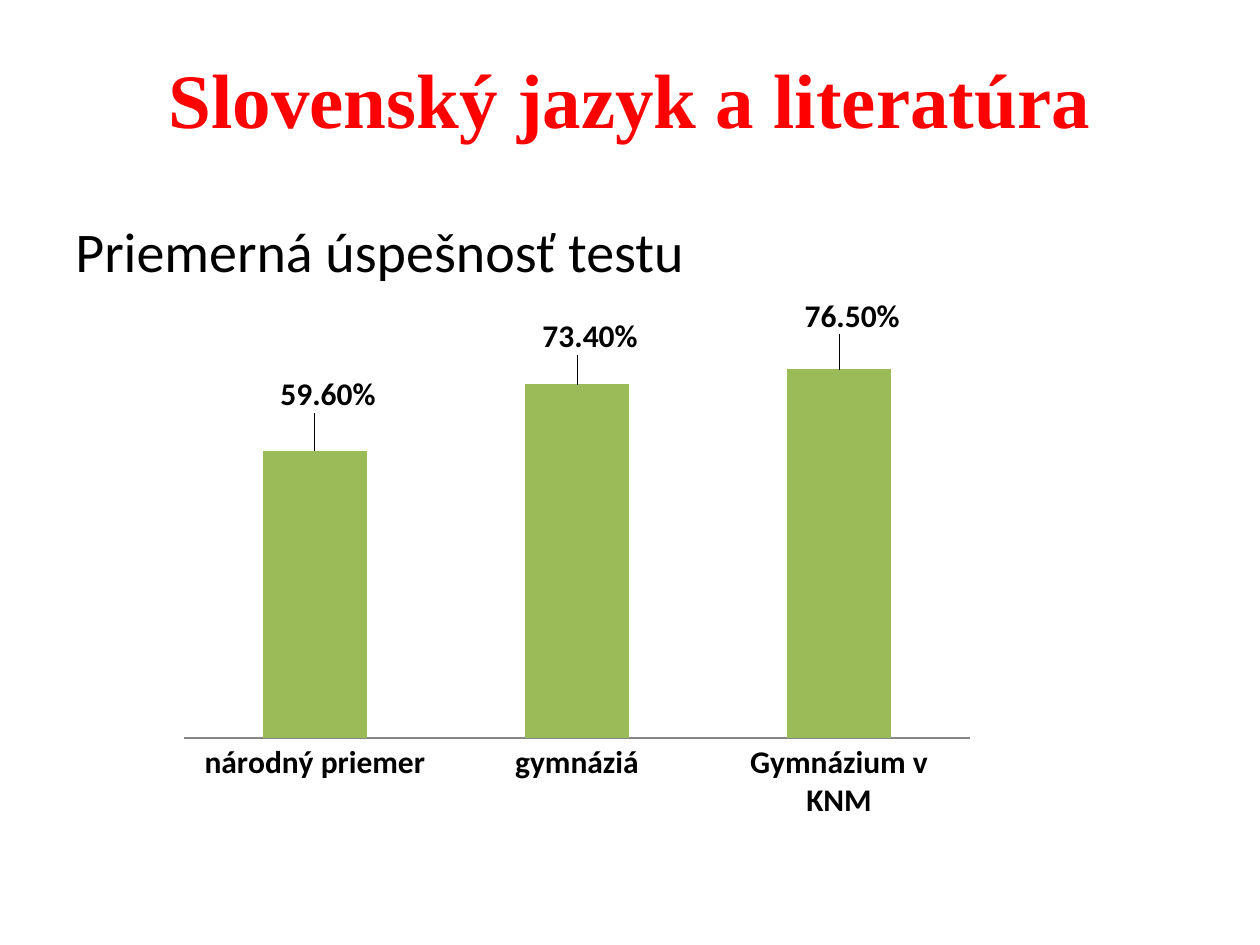
from lxml.etree import SubElement, fromstring
from pptx import Presentation
from pptx.chart.data import CategoryChartData
from pptx.dml.color import RGBColor
from pptx.enum.chart import XL_CHART_TYPE, XL_LABEL_POSITION, XL_TICK_MARK
from pptx.enum.text import MSO_ANCHOR, PP_ALIGN
from pptx.oxml.ns import qn
from pptx.util import Inches, Pt

TITLE = "Slovenský jazyk a literatúra"
HEADING = "Priemerná úspešnosť testu"
# category, value, label shift as a share of the chart size
SCORES = [
    ("národný priemer", 0.596, (0.016, -0.06)),
    ("gymnáziá", 0.734, (0.016, -0.045)),
    ("Gymnázium v KNM", 0.765, (0.016, -0.055)),
]
FORMAT = "0.00%"
GREEN, GREY, BLACK, RED = "9BBB59", "868686", "000000", "FF0000"


def style(font, size, bold=False, color=BLACK, name="Calibri"):
    font.size, font.bold, font.name = Pt(size), bold, name
    font.color.rgb = RGBColor.from_string(color)


def add_text(slide, text, box, align=PP_ALIGN.LEFT, anchor=MSO_ANCHOR.TOP, **look):
    frame = slide.shapes.add_textbox(*map(Inches, box)).text_frame
    frame.word_wrap = True
    frame.vertical_anchor = anchor
    line = frame.paragraphs[0]
    line.alignment = align
    run = line.add_run()
    run.text = text
    style(run.font, **look)


def make_layout(**parts):
    """Return a manual chart layout element."""
    layout = fromstring(
        '<c:layout xmlns:c="http://schemas.openxmlformats.org/'
        'drawingml/2006/chart"><c:manualLayout/></c:layout>')
    for tag, value in parts.items():
        SubElement(layout[0], qn(f"c:{tag}")).set("val", str(value))
    return layout


def add_scores(slide, box):
    data = CategoryChartData(number_format=FORMAT)
    data.categories = [name for name, _, _ in SCORES]
    data.add_series("Series 1", [value for _, value, _ in SCORES])
    chart = slide.shapes.add_chart(
        XL_CHART_TYPE.COLUMN_CLUSTERED, *map(Inches, box), data).chart
    chart.has_legend = chart.has_title = False
    style(chart.font, 10)

    names, scale = chart.category_axis, chart.value_axis
    style(names.tick_labels.font, 18, bold=True)
    names.major_tick_mark = XL_TICK_MARK.NONE
    names.format.line.color.rgb = RGBColor.from_string(GREY)
    names.format.line.width = Pt(0.75)
    scale.visible = scale.has_major_gridlines = False
    scale.minimum_scale, scale.maximum_scale = 0, 0.9

    plot = chart.plots[0]
    plot.gap_width = 150
    plot.vary_by_categories = False
    bars = plot.series[0]
    bars.format.fill.solid()
    bars.format.fill.fore_color.rgb = RGBColor.from_string(GREEN)

    labels = bars.data_labels
    labels.show_value = True
    labels.number_format, labels.number_format_is_linked = FORMAT, False
    labels.position = XL_LABEL_POSITION.OUTSIDE_END
    style(labels.font, 18, bold=True)
    for i, (_, _, (dx, dy)) in enumerate(SCORES):
        label = bars.points[i].data_label
        style(label.font, 18, bold=True)
        label.position = XL_LABEL_POSITION.OUTSIDE_END
    for item, (_, _, (dx, dy)) in zip(labels._element.findall(qn("c:dLbl")), SCORES):
        item.insert(1, make_layout(x=dx, y=dy))
        form = SubElement(item, qn("c:numFmt"))
        form.set("formatCode", FORMAT)
        form.set("sourceLinked", "0")
        item.insert(2, form)

    area = chart._chartSpace.chart.plotArea
    for old in area.findall(qn("c:layout")):
        area.remove(old)
    area.insert(0, make_layout(layoutTarget="inner", xMode="edge", yMode="edge",
                               x=0.02, y=0.02, w=0.96, h=0.81))


def main():
    deck = Presentation()
    deck.slide_width, deck.slide_height = Inches(10), Inches(7.5)
    slide = deck.slides.add_slide(deck.slide_layouts[6])
    add_text(slide, TITLE, (0.5, 0.3, 9, 0.95), align=PP_ALIGN.CENTER,
             anchor=MSO_ANCHOR.MIDDLE, size=44, bold=True, color=RED,
             name="Times New Roman")
    add_text(slide, HEADING, (0.5, 1.67, 9, 0.65), size=32)
    add_scores(slide, (1.33, 2.33, 6.5, 4.25))
    deck.save("out.pptx")


if __name__ == "__main__":
    main()
